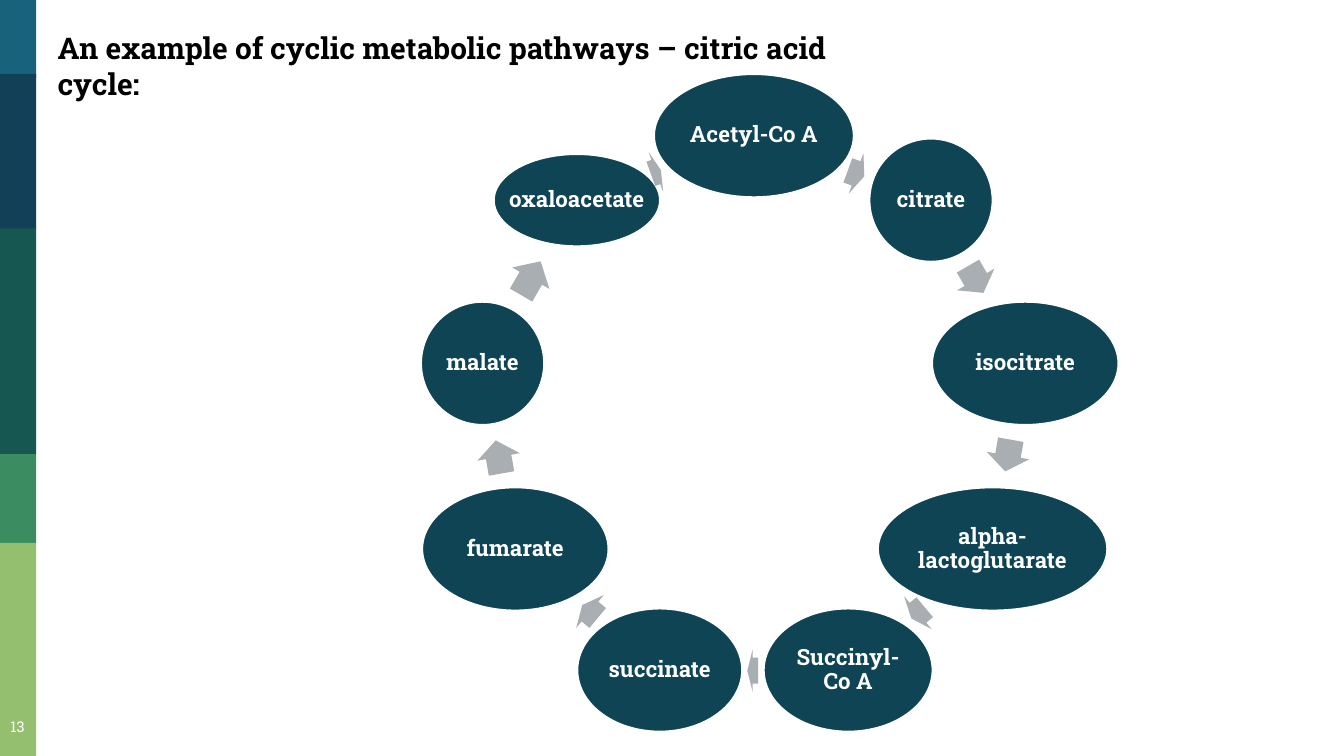
from math import cos, radians, sin

from pptx import Presentation
from pptx.dml.color import RGBColor
from pptx.enum.shapes import MSO_SHAPE
from pptx.enum.text import MSO_ANCHOR, PP_ALIGN
from pptx.util import Inches, Pt

COLORS = {
    "blue": "18637B", "navy": "124057", "forest": "165751", "green": "3B8D61",
    "lime": "94BF6E", "node": "0E4454", "arrow": "A8AEB2",
    "white": "FFFFFF", "black": "000000",
}

prs = Presentation()
prs.slide_width = Inches(10)
prs.slide_height = Inches(10 * 9 / 16)
s = prs.slides.add_slide(prs.slide_layouts[6])


def add_shape(kind, x, y, w, h, fill):
    sp = s.shapes.add_shape(kind, Inches(x), Inches(y), Inches(w), Inches(h))
    sp.shadow.inherit = False
    sp.fill.solid()
    sp.fill.fore_color.rgb = RGBColor.from_string(COLORS[fill])
    sp.line.fill.background()
    return sp


def add_text(sp, text, size, color, bold, align, inset_x, inset_y, wrap=True):
    tf = sp.text_frame
    tf.word_wrap = wrap
    tf.margin_left = tf.margin_right = Inches(inset_x)
    tf.margin_top = tf.margin_bottom = Inches(inset_y)
    p = tf.paragraphs[0]
    p.alignment = align
    r = p.add_run()
    r.text = text
    r.font.name = "Roboto Slab"
    r.font.size = Pt(size)
    r.font.bold = bold
    r.font.color.rgb = RGBColor.from_string(COLORS[color])
    return tf


bands = [("blue", 0, 0.58), ("navy", 0.55, 1.16), ("forest", 1.7, 1.68),
         ("green", 3.38, 0.66), ("lime", 4.04, 1.59)]
for color, top, height in bands:
    add_shape(MSO_SHAPE.RECTANGLE, 0, top, 0.27, height, color)

center_x, center_y, radius = 5.61, 3.06, 2.05
arrow_h = 0.32
steps = [
    ("Acetyl-Co A", 1.5, 0.93, 6.37, 1.29, 0.13),
    ("citrate", 0.93, 0.93, 7.26, 2.08, 0.23),
    ("isocitrate", 1.4, 0.93, 7.5, 3.39, 0.24),
    ("alpha-lactoglutarate", 1.72, 0.93, 6.83, 4.56, 0.13),
    ("Succinyl-Co A", 1.27, 0.93, 5.6, 4.99, 0.08),
    ("succinate", 1.24, 0.93, 4.39, 4.55, 0.15),
    ("fumarate", 1.4, 0.93, 3.71, 3.4, 0.25),
    ("malate", 0.93, 0.93, 3.95, 2.07, 0.29),
    ("oxaloacetate", 1.25, 0.7, 4.88, 1.28, 0.08),
]
step_angle = 360 / len(steps)

for i, (name, w, h, arrow_x, arrow_y, arrow_w) in enumerate(steps):
    angle = radians(i * step_angle)
    x = center_x + radius * sin(angle)
    y = center_y - radius * cos(angle)
    node = add_shape(MSO_SHAPE.OVAL, x - w / 2, y - h / 2, w, h, "node")
    node.line.color.rgb = RGBColor.from_string(COLORS["white"])
    node.line.width = Pt(2)
    tf = add_text(node, name, 12, "white", True, PP_ALIGN.CENTER, 0.02, 0.02,
                  wrap="-" in name)
    tf.vertical_anchor = MSO_ANCHOR.MIDDLE
    tf.paragraphs[0].line_spacing = 0.9

    arrow = add_shape(MSO_SHAPE.RIGHT_ARROW, arrow_x - arrow_w / 2,
                      arrow_y - arrow_h / 2, arrow_w, arrow_h, "arrow")
    arrow.adjustments[0] = 0.6
    arrow.adjustments[1] = 0.5
    arrow.rotation = (i + 0.5) * step_angle

number = s.shapes.add_textbox(Inches(-0.06), Inches(5.27), Inches(0.38), Inches(0.36))
add_text(number, "13", 8, "white", False, PP_ALIGN.CENTER, 0.1, 0.1)

title = s.shapes.add_textbox(Inches(0.33), Inches(0.17), Inches(5.97), Inches(0.64))
add_text(title, "An example of cyclic metabolic pathways – citric acid cycle:",
         16, "black", True, PP_ALIGN.LEFT, 0.1, 0.05)

prs.save("out.pptx")
